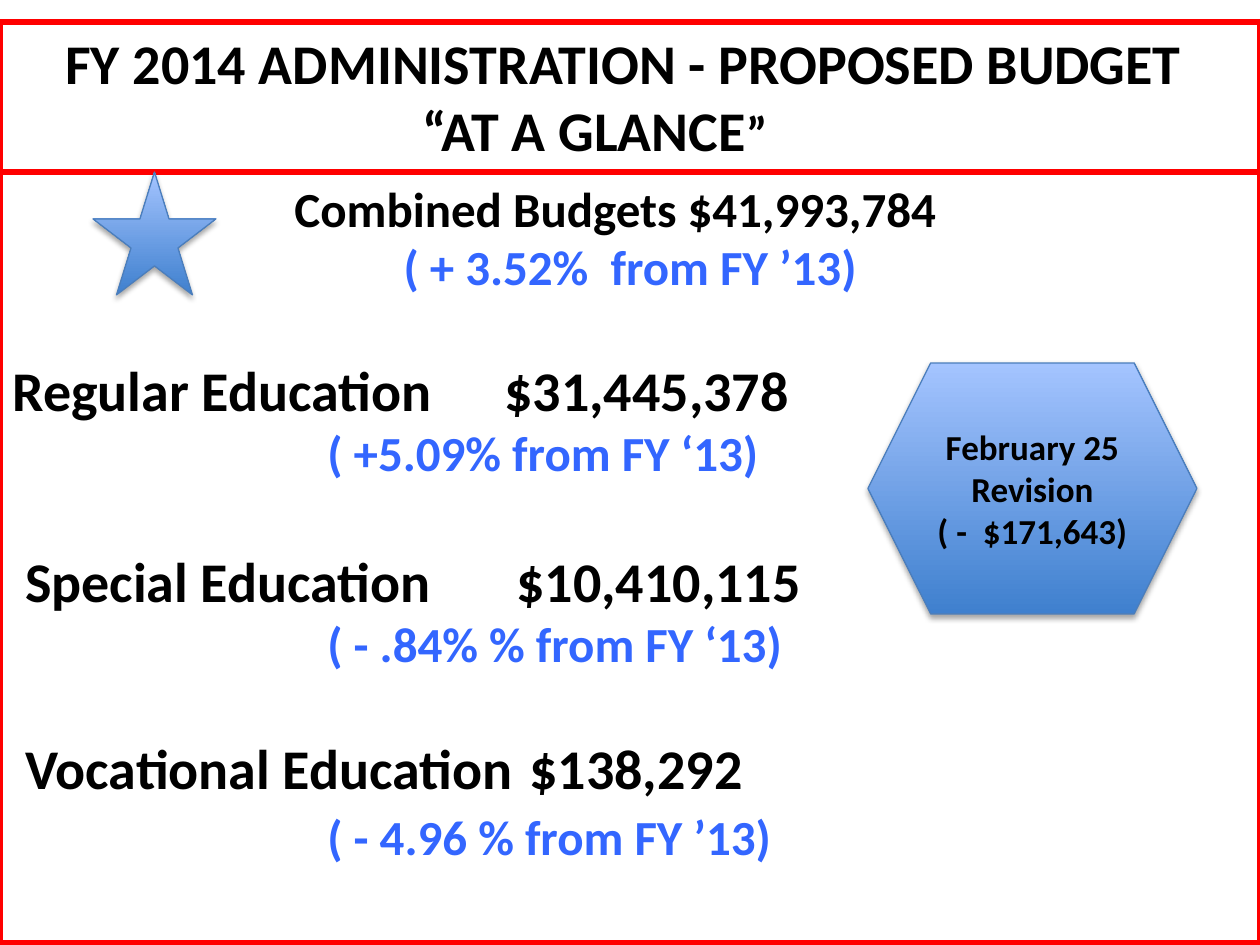
from lxml import etree
from pptx import Presentation, util as u
from pptx.dml.color import RGBColor
from pptx.enum import shapes, text
from pptx.oxml.ns import qn

PX = u.Inches(1) // 126
RED, BLACK, BLUE = "FF0000", "000000", "3366FF"


def color(value):
    return RGBColor.from_string(value)


class BudgetSlide:
    """Draws the panels, badges and text lines of one budget slide."""

    font = "Calibri"

    def __init__(self, deck):
        self.slide = deck.slides.add_slide(deck.slide_layouts[6])

    def shape(self, kind, box, line, width):
        item = self.slide.shapes.add_shape(kind, *(v * PX for v in box))
        item.shadow.inherit = False
        item.line.color.rgb = color(line)
        item.line.width = u.Pt(width)
        item.text_frame.word_wrap = True
        return item

    def panel(self, box):
        frame = self.shape(shapes.MSO_SHAPE.RECTANGLE, box, RED, 3)
        frame.fill.background()
        frame.text_frame.vertical_anchor = text.MSO_ANCHOR.TOP
        return frame.text_frame

    def badge(self, kind, box):
        emblem = self.shape(kind, box, "4B7EBC", 0.75)
        emblem.fill.gradient()
        emblem.fill.gradient_angle = 90
        for stop, shade in zip(emblem.fill.gradient_stops, ("3F80CE", "A4C4FF")):
            stop.color.rgb = color(shade)
        effects = emblem._element.spPr.find(qn("a:effectLst"))
        shadow = etree.SubElement(
            effects, qn("a:outerShdw"), blurRad=str(u.Pt(3.1)),
            dist=str(u.Pt(1.8)), dir="5400000", rotWithShape="0")
        black = etree.SubElement(shadow, qn("a:srgbClr"), val=BLACK)
        etree.SubElement(black, qn("a:alpha"), val="35000")
        emblem.text_frame.vertical_anchor = text.MSO_ANCHOR.MIDDLE
        return emblem.text_frame

    def line(self, frame, words, size, ink=BLACK, centred=True, before=0,
             after=0, spacing=None, indent=0, tab=0):
        first = frame.paragraphs[0]
        paragraph = first if not first.runs else frame.add_paragraph()
        paragraph.add_run().text = words
        paragraph.alignment = text.PP_ALIGN.CENTER if centred else text.PP_ALIGN.LEFT
        paragraph.space_before = u.Pt(before)
        paragraph.space_after = u.Pt(after)
        paragraph.line_spacing = spacing
        font = paragraph.font
        font.name, font.size, font.bold = self.font, u.Pt(size), True
        font.color.rgb = color(ink)
        properties = paragraph._p.get_or_add_pPr()
        if indent:
            properties.set("marL", str(indent * PX))
            properties.set("indent", "0")
        if tab:
            stops = etree.Element(qn("a:tabLst"))
            etree.SubElement(stops, qn("a:tab"), pos=str(tab * PX), algn="l")
            properties.find(qn("a:defRPr")).addprevious(stops)
        return paragraph


def main():
    deck = Presentation()
    deck.slide_width, deck.slide_height = u.Inches(10), u.Inches(7.5)
    page = BudgetSlide(deck)

    budgets = page.panel((0, 172, 1260, 771))
    page.line(budgets, " Combined Budgets $41,993,784\t", 28)
    page.line(budgets, "( + 3.52%  from FY ’13)", 28, BLUE)
    programs = (
        ("Regular Education", "$31,445,378", "( +5.09% from FY ‘13)", 492, 34, 3, None),
        (" Special Education", "$10,410,115", "( - .84% % from FY ‘13)", 504, 34, 0, None),
        (" Vocational Education", "$138,292", "( - 4.96 % from FY ’13)", 517, 31, 0, 1.1),
    )
    for name, amount, change, tab, before, after, spacing in programs:
        page.line(budgets, f"{name}\t{amount}", 32, centred=False,
                  before=before, spacing=spacing, tab=tab)
        page.line(budgets, change, 28, BLUE, centred=False,
                  after=after, spacing=spacing, indent=315)

    title = page.panel((0, 22, 1260, 150))
    page.line(title, "FY 2014 ADMINISTRATION - PROPOSED BUDGET ", 32)
    subtitle = page.line(title, " “AT A GLANCE", 32)
    closing = subtitle.add_run()
    closing.text = "”\t\t"
    closing.font.size = u.Pt(28)

    revision = page.badge(shapes.MSO_SHAPE.HEXAGON, (868, 363, 329, 251))
    for words in ("February 25", "Revision", "( -  $171,643)"):
        page.line(revision, words, 20)
    page.badge(shapes.MSO_SHAPE.STAR_5_POINT, (93, 172, 123, 123))

    deck.save("out.pptx")


if __name__ == "__main__":
    main()
